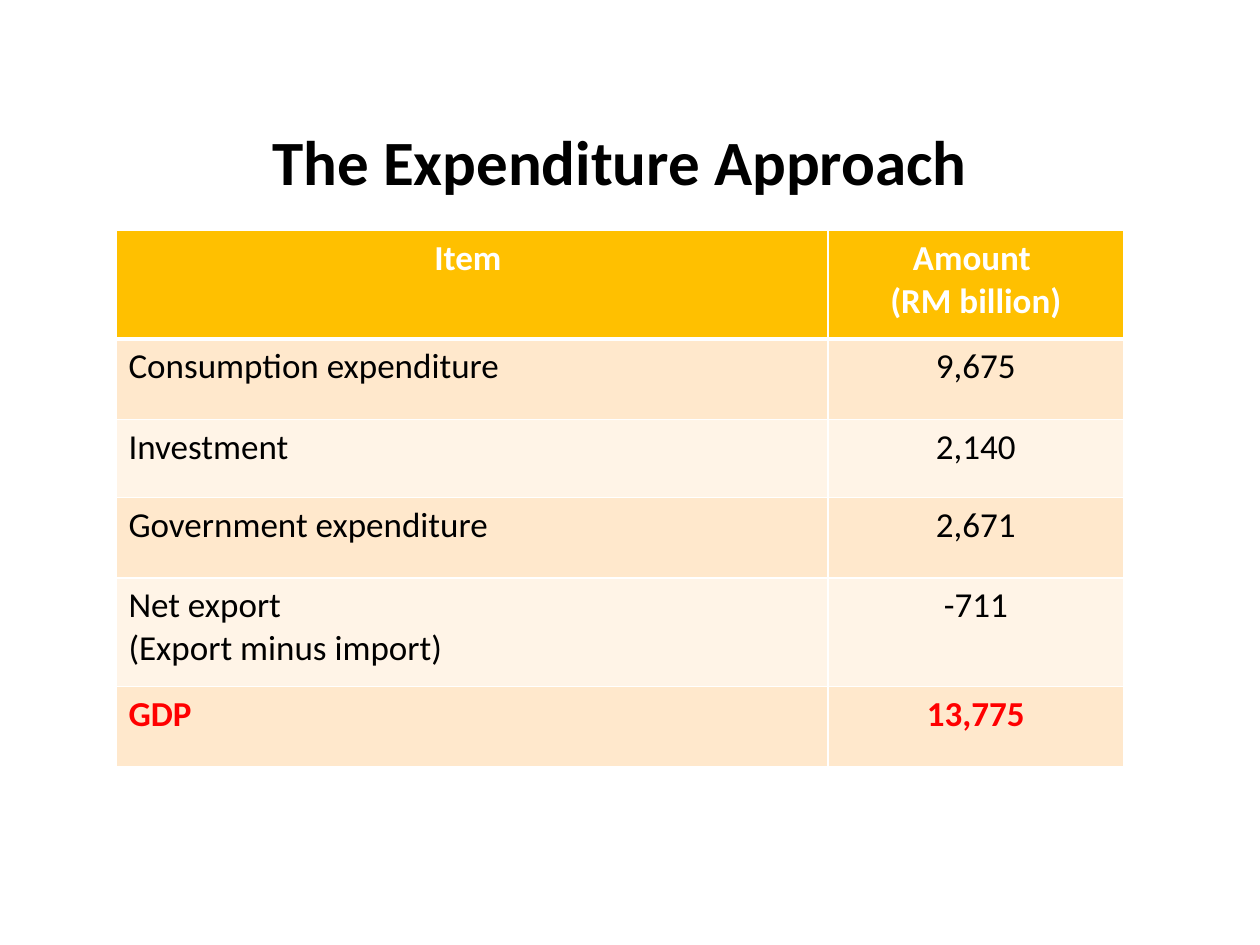
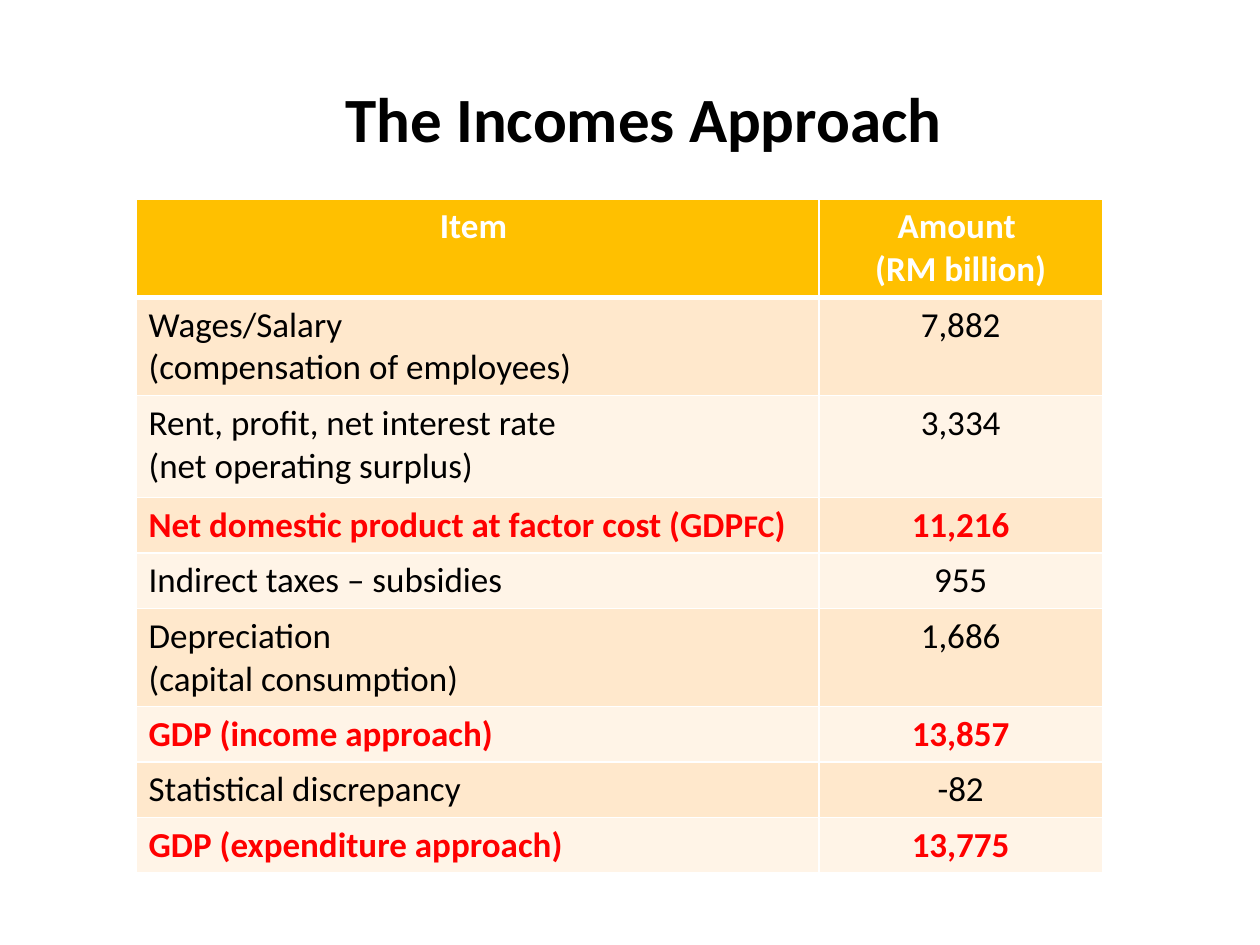
from lxml.etree import SubElement
from pptx import Presentation
from pptx.dml.color import RGBColor
from pptx.enum.text import PP_ALIGN
from pptx.oxml.ns import qn
from pptx.util import Inches, Pt

BLACK = RGBColor(0x00, 0x00, 0x00)
WHITE = RGBColor(0xFF, 0xFF, 0xFF)
RED = RGBColor(0xFF, 0x00, 0x00)
HEADER_GOLD = RGBColor(0xFF, 0xC0, 0x00)
BANDS = (RGBColor(0xFF, 0xE8, 0xCC), RGBColor(0xFF, 0xF4, 0xE7))

FONT = "Calibri"
HEADER = ("Item ", "Amount \n(RM billion)")

# Each row: item, amount, height in inches, whether it is a total.
# Text between bars is set in the smaller size.
EXPENDITURE_ROWS = [
    ("Consumption expenditure", "9,675", 0.64, False),
    ("Investment", "2,140", 0.62, False),
    ("Government expenditure", "2,671", 0.64, False),
    ("Net export\n(Export minus import)", "-711", 0.86, False),
    ("GDP", "13,775", 0.64, True),
]
INCOME_ROWS = [
    ("Wages/Salary\n(compensation of employees)", "7,882", 0.78, False),
    ("Rent, profit, net interest rate\n(net operating surplus)", "3,334", 0.81, False),
    ("Net domestic product at factor cost (GDP|FC|)", "11,216", 0.44, True),
    ("Indirect taxes – subsidies", "955", 0.44, False),
    ("Depreciation\n(capital consumption)", "1,686", 0.78, False),
    ("GDP (income approach)", "13,857", 0.44, True),
    ("Statistical discrepancy", "-82", 0.44, False),
    ("GDP (expenditure approach)", "13,775", 0.44, True),
]


def write_text(frame, text, size=20, small_size=18, color=BLACK, bold=False,
               align=PP_ALIGN.LEFT, space_before=0):
    """Fill a text frame: one paragraph per line, bars around smaller text."""
    frame.word_wrap = True
    for index, line in enumerate(text.split("\n")):
        paragraph = frame.add_paragraph() if index else frame.paragraphs[0]
        paragraph.alignment = align
        paragraph.space_before = Pt(space_before)
        for part_index, part in enumerate(line.split("|")):
            run = paragraph.add_run()
            run.text = part
            run.font.name = FONT
            run.font.size = Pt(small_size if part_index % 2 else size)
            run.font.bold = bold
            run.font.color.rgb = color


class Deck:
    def __init__(self):
        self.presentation = Presentation()
        self.presentation.slide_width = Inches(10)
        self.presentation.slide_height = Inches(7.5)
        self.slide = None

    def new_slide(self):
        blank = self.presentation.slide_layouts[6]
        self.slide = self.presentation.slides.add_slide(blank)

    def title(self, text, left, top):
        box = self.slide.shapes.add_textbox(
            Inches(left), Inches(top), Inches(9), Inches(1.25))
        write_text(box.text_frame, text, size=36, bold=True,
                   align=PP_ALIGN.CENTER, space_before=2)

    def borders(self, cell, top=1, bottom=1):
        properties = cell._tc.get_or_add_tcPr()
        for side, width in (("L", 1), ("R", 1), ("T", top), ("B", bottom)):
            line = SubElement(properties, qn(f"a:ln{side}"), w=str(Pt(width)))
            fill = SubElement(line, qn("a:solidFill"))
            SubElement(fill, qn("a:srgbClr"), val=str(WHITE))

    def cell(self, cell, text, fill, top=1, bottom=1, **text_format):
        self.borders(cell, top, bottom)
        cell.fill.solid()
        cell.fill.fore_color.rgb = fill
        write_text(cell.text_frame, text, **text_format)

    def amounts_table(self, rows, left, top, widths, header_height):
        heights = [header_height] + [row[2] for row in rows]
        table = self.slide.shapes.add_table(
            len(heights), len(widths), Inches(left), Inches(top),
            Inches(sum(widths)), Inches(sum(heights))).table
        table.first_row = table.horz_banding = False
        for column, width in zip(table.columns, widths):
            column.width = Inches(width)
        for table_row, height in zip(table.rows, heights):
            table_row.height = Inches(height)

        # Header row
        for column, text in enumerate(HEADER):
            self.cell(table.cell(0, column), text, HEADER_GOLD, bottom=3,
                      color=WHITE, bold=True, align=PP_ALIGN.CENTER)

        # Banded rows, totals in bold red
        for index, (item, amount, _, is_total) in enumerate(rows):
            style = {"fill": BANDS[index % 2], "top": 1 if index else 3,
                     "color": RED if is_total else BLACK, "bold": is_total}
            self.cell(table.cell(index + 1, 0), item, **style)
            self.cell(table.cell(index + 1, 1), amount,
                      align=PP_ALIGN.CENTER, **style)


def main():
    deck = Deck()

    # Expenditure approach
    deck.new_slide()
    deck.title("The Expenditure Approach", 0.42, 0.92)
    deck.amounts_table(EXPENDITURE_ROWS, 0.92, 1.83, (5.65, 2.35), 0.86)

    # Incomes approach
    deck.new_slide()
    deck.title("The Incomes Approach", 0.61, 0.58)
    deck.amounts_table(INCOME_ROWS, 1.08, 1.58, (5.42, 2.25), 0.78)

    deck.presentation.save("out.pptx")


if __name__ == "__main__":
    main()
